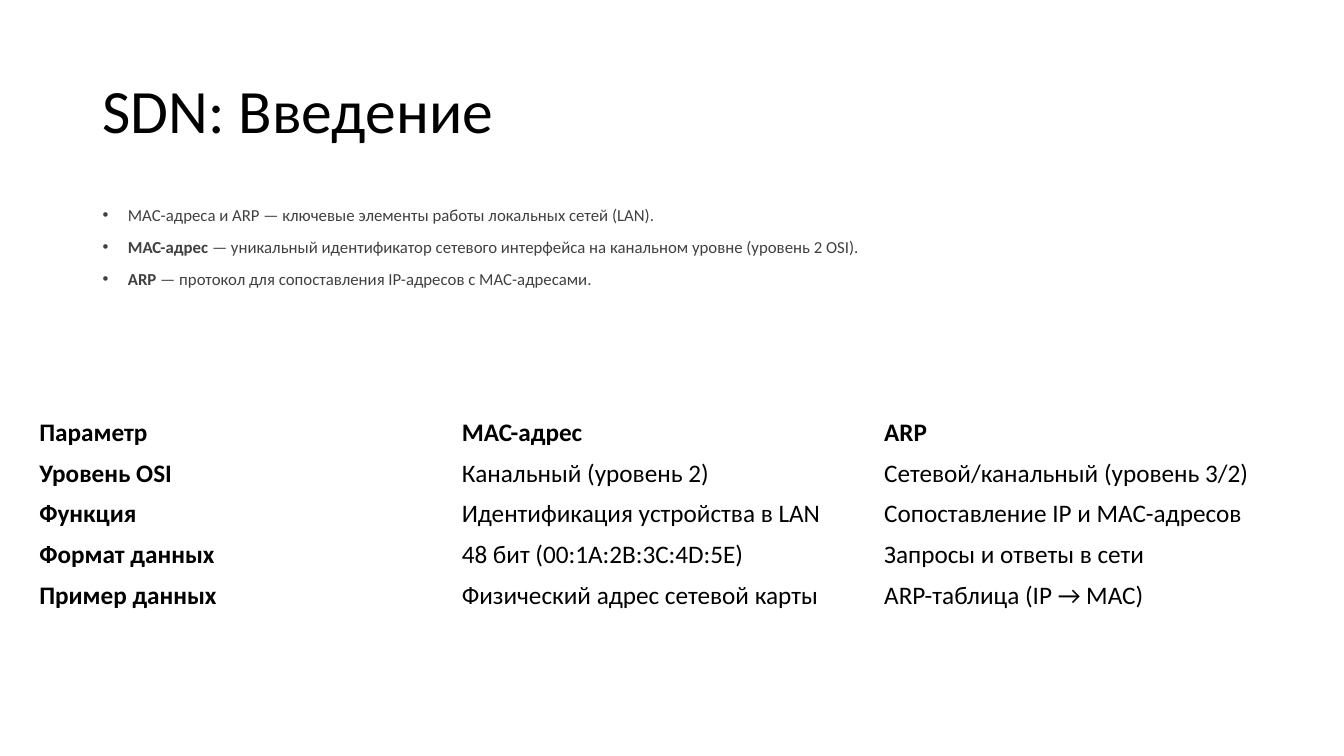
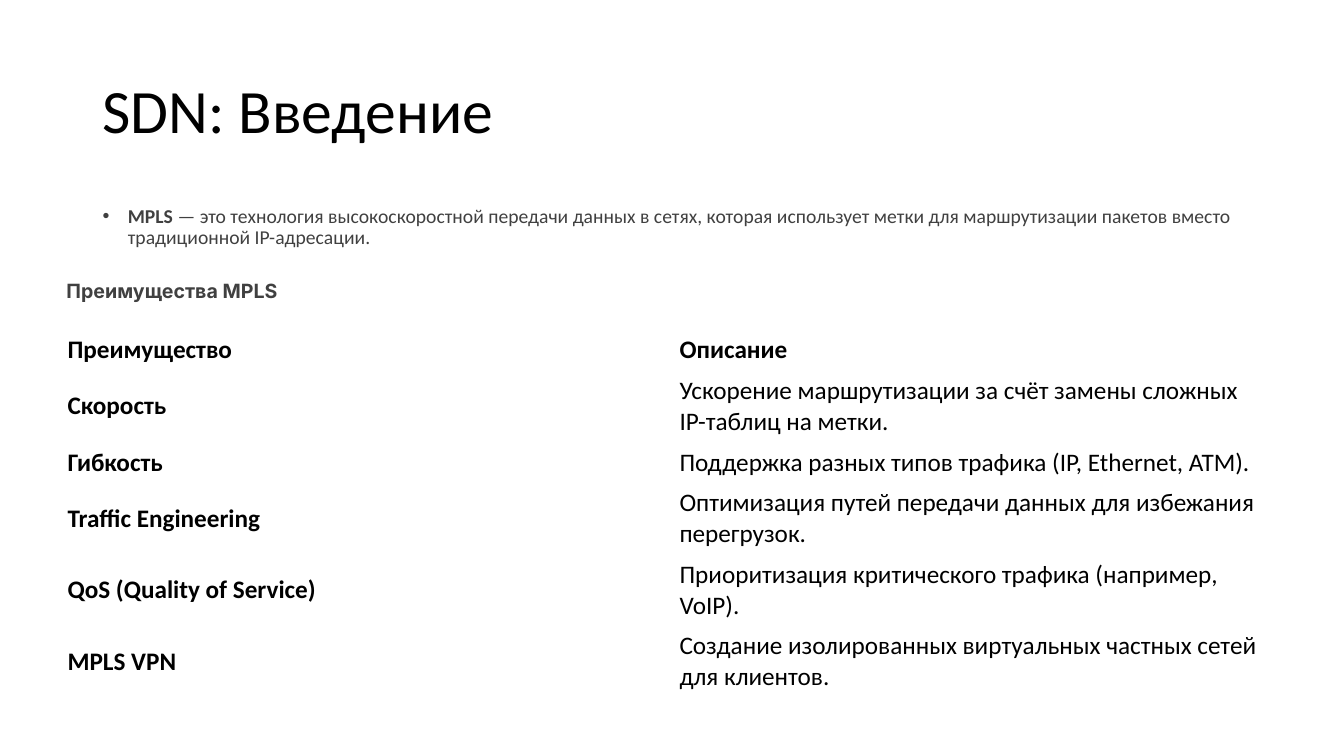
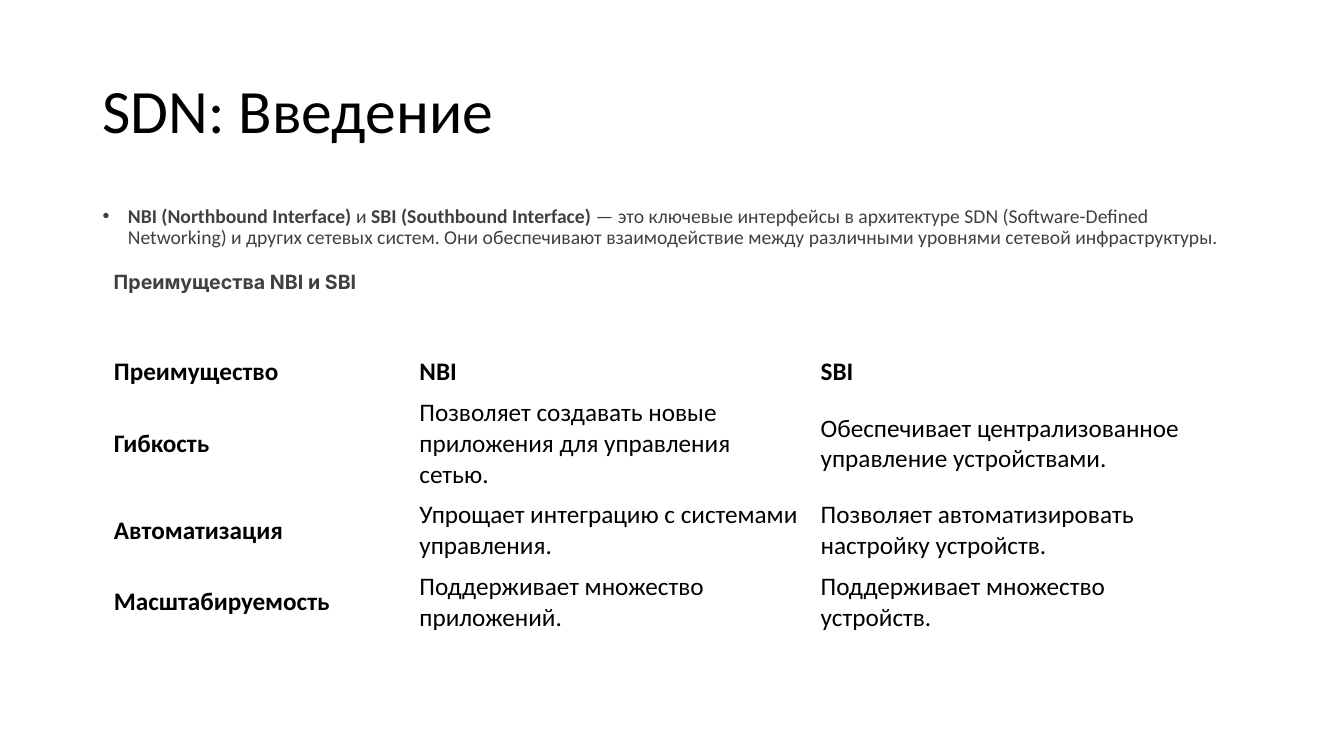
from pptx import Presentation
from pptx.dml.color import RGBColor
from pptx.enum.text import MSO_ANCHOR
from pptx.oxml.xmlchemy import OxmlElement
from pptx.util import Inches, Pt

TOP, MIDDLE = MSO_ANCHOR.TOP, MSO_ANCHOR.MIDDLE
COLORS = {"black": "000000", "gray": "404040"}
TITLE = "SDN: Введение"
TITLE_BOX = (0.92, 0.4, 11.5, 1.45)
TITLE_FONT = {"size": Pt(44), "name": "Calibri"}
HEADING_FONT = {"size": Pt(14), "name": "Inter"}
TABLE_FONT = {"size": Pt(18), "name": "Calibri"}
CELL_PADDING, LINE_HEIGHT = 0.1, 0.305

SLIDES = [
    {
        "body_box": (0.92, 2, 11.5, 4.76),
        "body_size": 12,
        "bullets": [
            "MAC-адреса и ARP — ключевые элементы работы локальных сетей (LAN).",
            "**MAC-адрес** — уникальный идентификатор сетевого интерфейса на канальном уровне (уровень 2 OSI).",
            "**ARP** — протокол для сопоставления IP-адресов с MAC-адресами.",
        ],
        "table_at": (0.29, 4.09),
        "cols": [4.19, 4.19, 4.19],
        "row_lines": [1, 1, 1, 1, 1],
        "rows": [
            ["Параметр", "MAC-адрес", "ARP"],
            ["Уровень OSI", "Канальный (уровень 2)", "Сетевой/канальный (уровень 3/2)"],
            ["Функция", "Идентификация устройства в LAN", "Сопоставление IP и MAC-адресов"],
            ["Формат данных", "48 бит (00:1A:2B:3C:4D:5E)", "Запросы и ответы в сети"],
            ["Пример данных", "Физический адрес сетевой карты", "ARP-таблица (IP → MAC)"],
        ],
    },
    {
        "body_box": (0.92, 2, 11.5, 1.45),
        "body_size": 14,
        "bullets": [
            "**MPLS** — это технология высокоскоростной передачи данных в сетях, которая использует "
            "метки для маршрутизации пакетов вместо традиционной IP-адресации.",
        ],
        "heading": "**Преимущества MPLS**",
        "heading_box": (0.56, 2.72, 7.41, 0.57),
        "table_at": (0.57, 3.27),
        "cols": [6.07, 5.97],
        "row_lines": [1, 2, 1, 2, 2, 2],
        "rows": [
            ["Преимущество", "Описание"],
            ["Скорость", "Ускорение маршрутизации за счёт замены сложных IP-таблиц на метки."],
            ["Гибкость", "Поддержка разных типов трафика (IP, Ethernet, ATM)."],
            ["Traffic Engineering", "Оптимизация путей передачи данных для избежания перегрузок."],
            ["QoS (Quality of Service)", "Приоритизация критического трафика (например, VoIP)."],
            ["MPLS VPN", "Создание изолированных виртуальных частных сетей для клиентов."],
        ],
    },
    {
        "body_box": (0.92, 2, 11.5, 5.19),
        "body_size": 14,
        "bullets": [
            "**NBI (Northbound Interface)** и **SBI (Southbound Interface)** — это ключевые интерфейсы "
            "в архитектуре SDN (Software-Defined Networking) и других сетевых систем. "
            "Они обеспечивают взаимодействие между различными уровнями сетевой инфраструктуры.",
        ],
        "heading": "**Преимущества NBI и SBI**",
        "heading_box": (1.03, 2.63, 9.03, 0.64),
        "table_at": (1.03, 3.49),
        "cols": [3.03, 3.98, 3.98],
        "row_lines": [1, 3, 2, 2],
        "rows": [
            ["Преимущество", "NBI", "SBI"],
            ["Гибкость", "Позволяет создавать новые приложения для управления сетью.",
             "Обеспечивает централизованное управление устройствами."],
            ["Автоматизация", "Упрощает интеграцию с системами управления.",
             "Позволяет автоматизировать настройку устройств."],
            ["Масштабируемость", "Поддерживает множество приложений.",
             "Поддерживает множество устройств."],
        ],
    },
]


def add_runs(p, text, font, color):
    for i, part in enumerate(text.split("**")):
        if part:
            r = p.add_run()
            r.text = part
            for key, value in {**font, "bold": i % 2 == 1}.items():
                setattr(r.font, key, value)
            r.font.color.rgb = RGBColor.from_string(COLORS[color])


def add_text(s, box, lines, font, color, anchor=TOP, spacing=None, bullets=False):
    tf = s.shapes.add_textbox(*map(Inches, box)).text_frame
    tf.word_wrap = True
    tf.vertical_anchor = anchor
    for i, line in enumerate(lines):
        p = tf.add_paragraph() if i else tf.paragraphs[0]
        if spacing:
            p.line_spacing = spacing
        if bullets:
            p.space_before = Pt(10)
            pPr = p._p.get_or_add_pPr()
            pPr.set("marL", str(Inches(0.25)))
            pPr.set("indent", str(Inches(-0.25)))
            for tag, key, value in [("a:buFont", "typeface", "Arial"), ("a:buChar", "char", "•")]:
                bullet = OxmlElement(tag)
                bullet.set(key, value)
                pPr.append(bullet)
        add_runs(p, line, font, color)


prs = Presentation()
prs.slide_width, prs.slide_height = Inches(13.33), Inches(7.5)

for data in SLIDES:
    s = prs.slides.add_slide(prs.slide_layouts[6])
    add_text(s, TITLE_BOX, [TITLE], TITLE_FONT, "black", MIDDLE, 0.9)
    body_font = {"size": Pt(data["body_size"]), "name": "Calibri"}
    add_text(s, data["body_box"], data["bullets"], body_font, "gray", spacing=0.9, bullets=True)

    heights = [CELL_PADDING + LINE_HEIGHT * n for n in data["row_lines"]]
    size = (sum(data["cols"]), sum(heights))
    frame = s.shapes.add_table(len(heights), len(data["cols"]), *map(Inches, data["table_at"] + size))
    table = frame.table
    table.first_row = table.horz_banding = False
    for col, width in zip(table.columns, data["cols"]):
        col.width = Inches(width)
    for row, height in zip(table.rows, heights):
        row.height = Inches(height)
    for i, texts in enumerate(data["rows"]):
        for j, text in enumerate(texts):
            cell = table.cell(i, j)
            cell.fill.background()
            cell.vertical_anchor = MIDDLE
            is_header = i == 0 or j == 0
            add_runs(cell.text_frame.paragraphs[0], f"**{text}**" if is_header else text, TABLE_FONT, "black")

    if "heading" in data:
        add_text(s, data["heading_box"], [data["heading"]], HEADING_FONT, "gray")

prs.save("out.pptx")
